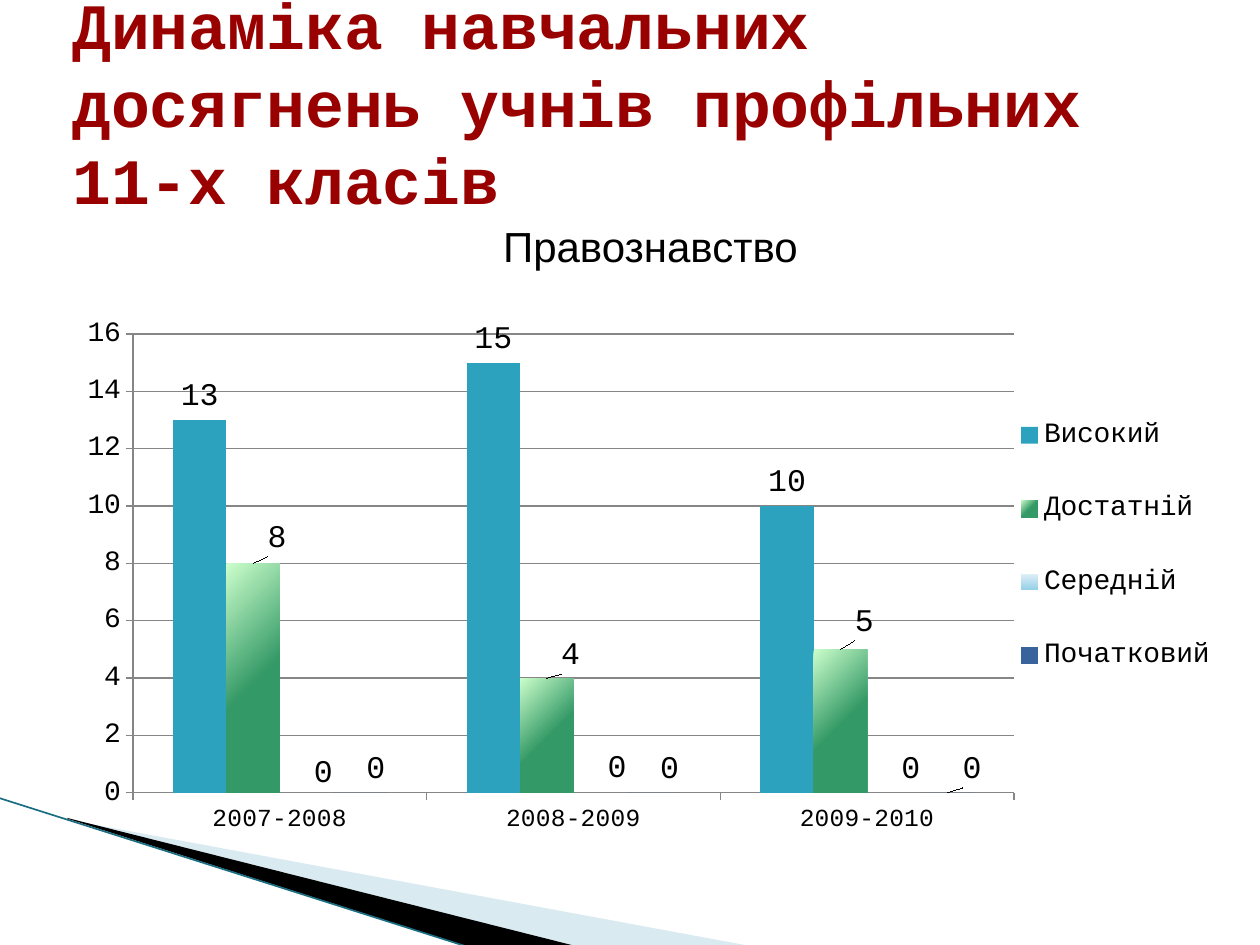
from lxml.etree import SubElement
from pptx import Presentation
from pptx.chart.data import CategoryChartData
from pptx.dml.color import RGBColor
from pptx.enum.chart import XL_CHART_TYPE, XL_LABEL_POSITION, XL_LEGEND_POSITION, XL_TICK_MARK
from pptx.enum.shapes import MSO_CONNECTOR
from pptx.enum.text import MSO_ANCHOR, PP_ALIGN
from pptx.oxml import parse_xml
from pptx.oxml.ns import nsdecls, qn
from pptx.util import Pt

PX = 914400 // 126
MONO = "Courier New"
CHART_PLACE = (44, 210, 1181, 722)
COLORS = {
    "title": "990000", "text": "000000", "wedge": "A0CBDC", "shade": "000000",
    "edge": "1B6E82", "grid": "868686", "high": "2DA2BF", "start": "39639D",
    "green_light": "CCFFCC", "green": "339966", "sky": "92CFE8", "sky_light": "DFEFF6",
}
YEARS = ["2007-2008", "2008-2009", "2009-2010"]
LEVELS = [
    ("Високий", (13, 15, 10), ["high"], []),
    ("Достатній", (8, 4, 5), ["green_light", "green", 0.53, 315],
     [(24, -2), (24, 1), (24, -4)]),
    ("Середній", (0, 0, 0), ["sky", "sky_light", 1, 90],
     [(17, 4), (17, -1), (17, 0)]),
    ("Початковий", (0, 0, 0), ["start"],
     [(16, 0), (16, 0), (25, 0)]),
]


def color(name):
    return RGBColor.from_string(COLORS[name])


def set_font(font, size, name=MONO, tone="text", bold=False):
    font.size, font.name, font.bold = Pt(size), name, bold
    font.color.rgb = color(tone)


def add_text(page, text, place, size, name, tone, bold=False, align=PP_ALIGN.LEFT):
    box = page.shapes.add_textbox(*[value * PX for value in place])
    frame = box.text_frame
    frame.word_wrap = True
    frame.vertical_anchor = MSO_ANCHOR.MIDDLE
    paragraph = frame.paragraphs[0]
    paragraph.text = text
    paragraph.alignment = align
    set_font(paragraph.font, size, name, tone, bold)
    return frame


def fit_frame(shape, frame):
    left, top, width, height = [value * PX for value in frame]
    shift_x, shift_y = shape.left - left, shape.top - top
    outline = shape._element.find(".//" + qn("a:pathLst"))[0]
    outline.set("w", str(width))
    outline.set("h", str(height))
    for point in outline.iter(qn("a:pt")):
        point.set("x", str(int(point.get("x")) + shift_x))
        point.set("y", str(int(point.get("y")) + shift_y))
    shape.left, shape.top, shape.width, shape.height = left, top, width, height


def add_wedge(page, frame, points, tone, opacity=100):
    corners = [(x * PX, y * PX) for x, y in points]
    builder = page.shapes.build_freeform(*corners[0])
    builder.add_line_segments(corners[1:], close=True)
    shape = builder.convert_to_shape()
    fit_frame(shape, frame)
    shape.shadow.inherit = False
    shape.fill.solid()
    shape.fill.fore_color.rgb = color(tone)
    shape.line.fill.background()
    if opacity < 100:
        tint = shape.fill._xPr.find(".//" + qn("a:srgbClr"))
        SubElement(tint, qn("a:alpha")).set("val", str(opacity * 1000))


def add_edge(page, start, end):
    edge = page.shapes.add_connector(
        MSO_CONNECTOR.STRAIGHT, *[value * PX for value in start + end])
    edge.line.color.rgb = color("edge")
    edge.line.width = Pt(0.95)
    SubElement(edge._element.spPr, qn("a:effectLst"))


def set_layout(parent, index, x, y, w=None, h=None, **modes):
    _, _, width, height = CHART_PLACE
    values = dict(modes, x=x / width, y=y / height)
    if w:
        values.update(w=w / width, h=h / height)
    tags = "".join(f'<c:{tag} val="{value}"/>' for tag, value in values.items())
    for old in parent.findall(qn("c:layout")):
        parent.remove(old)
    parent.insert(index, parse_xml(
        f'<c:layout {nsdecls("c")}><c:manualLayout>{tags}</c:manualLayout></c:layout>'))


def paint(fill, tones):
    if len(tones) == 1:
        fill.solid()
        fill.fore_color.rgb = color(tones[0])
        return
    first, last, position, angle = tones
    fill.gradient()
    fill.gradient_angle = angle
    for stop, tone, place in zip(fill.gradient_stops, (first, last), (0, position)):
        stop.color.rgb = color(tone)
        stop.position = place


def style_series(series, tones, offsets):
    paint(series.format.fill, tones)
    series.invert_if_negative = False
    labels = series.data_labels
    labels.show_value = True
    labels.position = XL_LABEL_POSITION.OUTSIDE_END
    set_font(labels.font, 18)
    for index, (x, y) in enumerate(offsets):
        label = series.points[index].data_label
        set_font(label.font, 18)
        label.position = XL_LABEL_POSITION.OUTSIDE_END
        set_layout(labels._element.findall(qn("c:dLbl"))[index], 1, x, y)
    for leader in labels._element.findall(qn("c:showLeaderLines")):
        labels._element.remove(leader)
    labels._element.append(parse_xml(
        f'<c:extLst {nsdecls("c")}><c:ext uri="{{CE6537A1-D6FC-4f65-9D91-7224C49458BB}}" '
        'xmlns:c15="http://schemas.microsoft.com/office/drawing/2012/chart">'
        '<c15:showLeaderLines val="0"/></c:ext></c:extLst>'))


def style_axis(axis, size):
    axis.major_tick_mark = XL_TICK_MARK.OUTSIDE
    axis.minor_tick_mark = XL_TICK_MARK.NONE
    axis.format.line.color.rgb = color("grid")
    set_font(axis.tick_labels.font, size)


def add_level_chart(page):
    data = CategoryChartData(number_format="General")
    data.categories = YEARS
    for name, values, _, _ in LEVELS:
        data.add_series(name, values)
    chart = page.shapes.add_chart(
        XL_CHART_TYPE.COLUMN_CLUSTERED, *[value * PX for value in CHART_PLACE], data).chart
    chart.has_title = False
    set_font(chart.font, 18)
    plot = chart.plots[0]
    plot.gap_width, plot.overlap, plot.vary_by_categories = 150, 0, False
    for series, (_, _, tones, offsets) in zip(plot.series, LEVELS):
        style_series(series, tones, offsets)
    style_axis(chart.category_axis, 14)
    values = chart.value_axis
    style_axis(values, 16)
    values.minimum_scale, values.maximum_scale, values.major_unit = 0, 16, 2
    values.major_gridlines.format.line.color.rgb = color("grid")
    chart.has_legend = True
    legend = chart.legend
    legend.position = XL_LEGEND_POSITION.RIGHT
    legend.include_in_layout = False
    set_font(legend.font, 16)
    set_layout(legend._element, 1, 971, 167, 201, 337, xMode="edge", yMode="edge")
    set_layout(chart._chartSpace.chart.plotArea, 0, 89, 124, 881, 459,
               layoutTarget="inner", xMode="edge", yMode="edge")


def main():
    deck = Presentation()
    deck.slide_width, deck.slide_height = 1260 * PX, 945 * PX
    page = deck.slides.add_slide(deck.slide_layouts[6])
    add_wedge(page, (98, 689, 524, 199),
              [(69, 820), (750, 946), (575, 946), (69, 819)], "wedge", 40)
    add_wedge(page, (-8, 798, 524, 116),
              [(67, 818), (575, 946), (472, 948), (68, 819)], "shade")
    add_edge(page, (-1, 798), (468, 947))
    title = add_text(page, "Динаміка навчальних досягнень учнів профільних 11-х класів",
                     (60, 5, 1134, 189), 37, MONO, "title", bold=True)
    title.margin_top = 10 * PX
    add_level_chart(page)
    add_text(page, "Правознавство", (353, 214, 595, 63), 24, "Arial", "text",
             align=PP_ALIGN.CENTER)
    deck.save("out.pptx")


if __name__ == "__main__":
    main()
